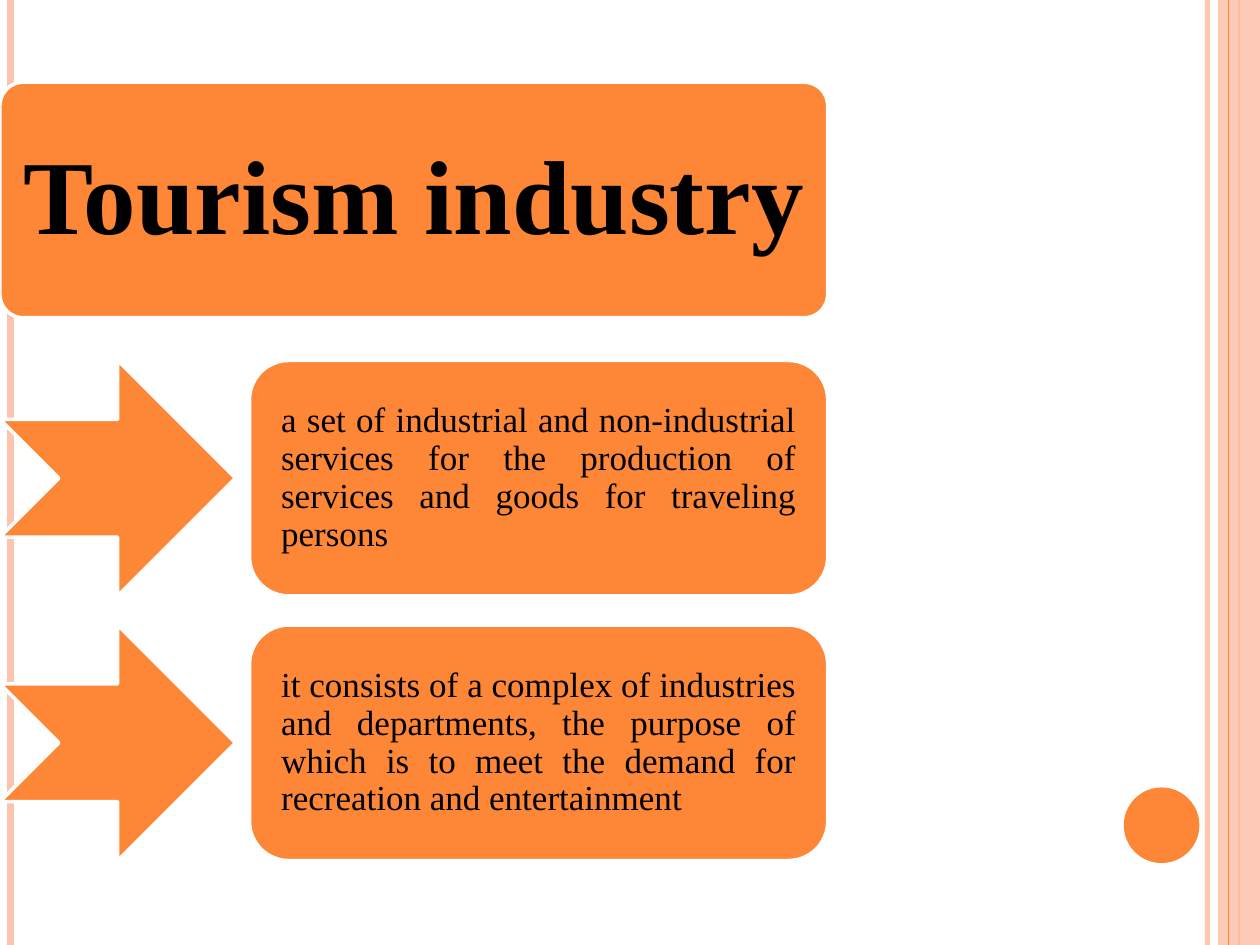
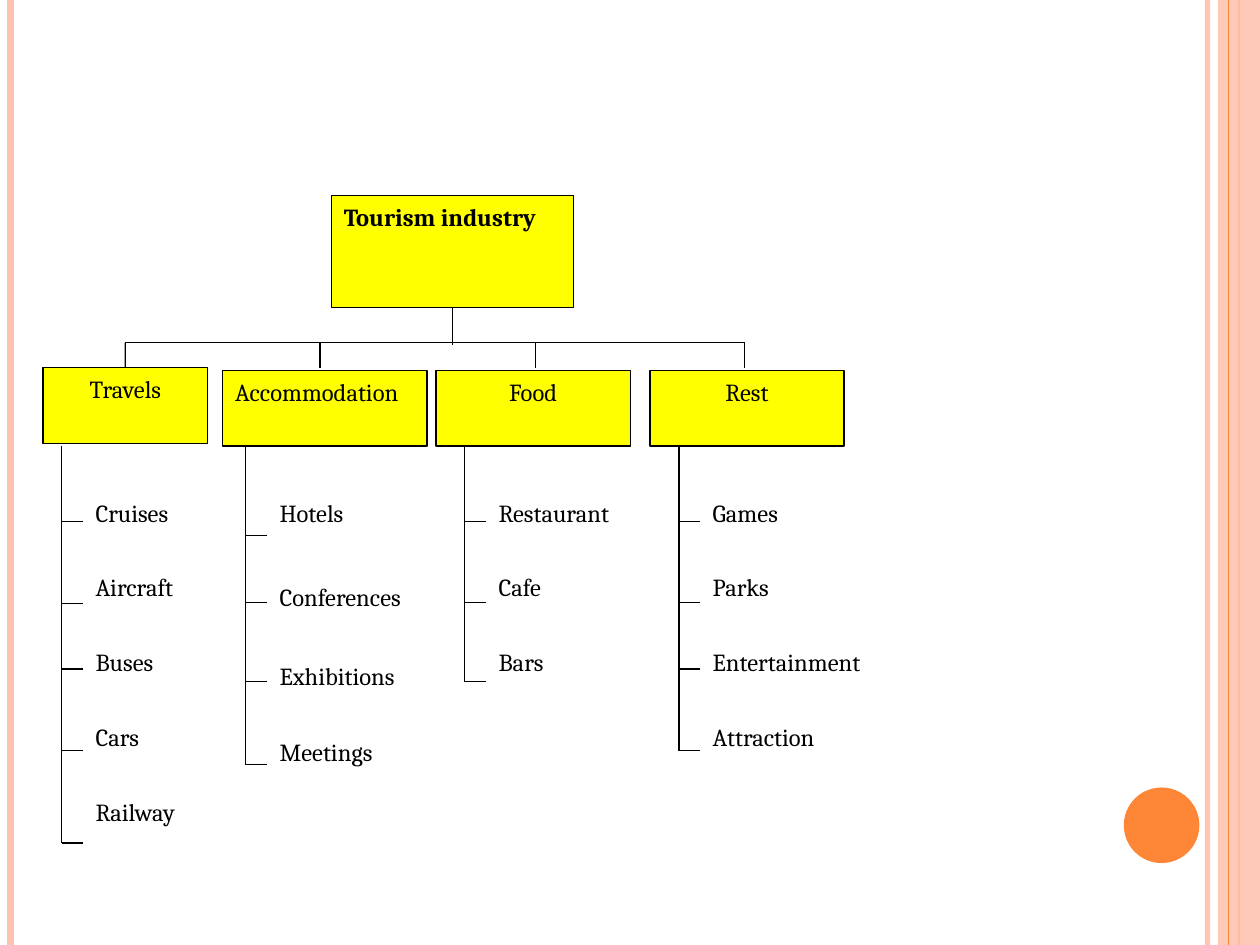
from lxml.etree import SubElement
from pptx import Presentation
from pptx.dml.color import RGBColor
from pptx.enum.shapes import MSO_CONNECTOR, MSO_SHAPE
from pptx.enum.text import MSO_ANCHOR, MSO_AUTO_SIZE, PP_ALIGN
from pptx.oxml.ns import qn
from pptx.util import Pt

ORANGE, PEACH, YELLOW = "FE8637", "FEC3AE", "FFFF00"
WHITE, BLACK = "FFFFFF", "000000"
SERIF, CHART_FONT = "Times New Roman", "Cambria"
SLIDE_WIDTH, SLIDE_HEIGHT = 720, 540
BOTTOM, TOP = 2, 0


# Shared helpers
def color(hex_text):
    return RGBColor.from_string(hex_text)


def set_alpha(shape, percent):
    for color_element in shape._element.spPr.iter(qn("a:srgbClr")):
        SubElement(color_element, qn("a:alpha")).set("val", str(percent * 1000))


def paint(shape, fill, line=None, width=0.75):
    shape.fill.solid()
    shape.fill.fore_color.rgb = color(fill)
    if line:
        shape.line.color.rgb = color(line)
        shape.line.width = Pt(width)
    else:
        shape.line.fill.background()


def place(shape, left, top, width, height):
    shape.left, shape.top = Pt(left), Pt(top)
    shape.width, shape.height = Pt(width), Pt(height)


def add_block(slide, kind, box, fill, line=None, width=0.75):
    shape = slide.shapes.add_shape(kind, *map(Pt, box))
    shape.shadow.inherit = False
    paint(shape, fill, line, width)
    return shape


def add_line(slide, start, end, line=BLACK, width=0.75):
    connector = slide.shapes.add_connector(
        MSO_CONNECTOR.STRAIGHT, *map(Pt, start + end))
    connector.line.color.rgb = color(line)
    connector.line.width = Pt(width)
    SubElement(connector._element.spPr, qn("a:effectLst"))
    return connector


def write(shape, text, font, size, align=PP_ALIGN.LEFT, anchor=MSO_ANCHOR.TOP,
          bold=False, inset=None, spacing=1.0, wrap=True):
    frame = shape.text_frame
    frame.text = text
    frame.word_wrap = wrap
    frame.auto_size = MSO_AUTO_SIZE.NONE
    frame.vertical_anchor = anchor
    if inset:
        frame.margin_left = frame.margin_right = Pt(inset)
        frame.margin_top = frame.margin_bottom = Pt(inset)
    paragraph = frame.paragraphs[0]
    paragraph.alignment = align
    paragraph.line_spacing = spacing
    for run in paragraph.runs:
        run.font.name, run.font.size, run.font.bold = font, Pt(size), bold
        run.font.color.rgb = color(BLACK)


# Stripes and disc, drawn once and kept on the layout
def decorate_layout(slide):
    def stripe(x, line, width):
        return add_line(slide, (x, 0), (x, SLIDE_HEIGHT), line, width)

    soft_stripe = stripe(690, PEACH, 3)
    set_alpha(soft_stripe, 93)
    left_stripe = stripe(6, PEACH, 4.5)
    dark_stripe = stripe(708, ORANGE, 1.5)
    band = add_block(slide, MSO_SHAPE.RECTANGLE,
                     (696, 0, 24, SLIDE_HEIGHT), PEACH)
    set_alpha(band, 87)
    thin_stripe = stripe(702, ORANGE, 0.75)
    disc = add_block(slide, MSO_SHAPE.OVAL, (642.2, 450, 43.2, 43.2), ORANGE)
    parts = (soft_stripe, left_stripe, dark_stripe, band, thin_stripe, disc)
    layout_tree = slide.slide_layout.shapes._spTree
    for number, part in enumerate(parts, 101):
        part._element.xpath(".//p:cNvPr")[0].set("id", str(number))
        layout_tree.append(part._element)


# Slide 1: banner and definitions
def add_banner(slide, box, text):
    left, top, width, height = box
    banner = add_block(slide, MSO_SHAPE.ROUNDED_RECTANGLE, box,
                       ORANGE, WHITE, 2)
    banner.adjustments[0] = 0.1
    title = slide.shapes.title
    place(title, left + 3.6, top + 3.9, width - 7.2, height - 7.8)
    write(title, text, SERIF, 60, PP_ALIGN.CENTER, MSO_ANCHOR.MIDDLE,
          bold=True, inset=8, spacing=0.9)
    banner._element.addnext(title._element)


def add_definition(slide, box, text):
    left, top, width, height = box
    card_offset = height + 8
    add_block(slide, MSO_SHAPE.NOTCHED_RIGHT_ARROW,
              (left, top, height, height), ORANGE, WHITE, 2)
    card = add_block(slide, MSO_SHAPE.ROUNDED_RECTANGLE,
                     (left + card_offset, top, width - card_offset, height),
                     ORANGE, WHITE, 2)
    write(card, text, SERIF, 20, PP_ALIGN.JUSTIFY, MSO_ANCHOR.MIDDLE,
          inset=11.5, spacing=0.9)


def build_definition_slide(slide):
    width, height, gap = 473, 134.6, 16.6
    add_banner(slide, (0, 47, width, height), "Tourism industry")
    definitions = (
        "a set of industrial and non-industrial services for the production "
        "of services and goods for traveling persons",
        "it consists of a complex of industries and departments, the purpose "
        "of which is to meet the demand for recreation and entertainment",
    )
    for row, text in enumerate(definitions):
        add_definition(slide, (0, 206 + row * (height + gap), width, height),
                       text)


# Slide 2: industry tree
LABEL_STEP = 42.8
BRANCHES = (
    # name, box left, top, width, alignment, drop x, spine x,
    # items with label top and tick height
    ("Travels", 24.5, 210.2, 94.3, PP_ALIGN.CENTER, 71.6, 35.3,
     (("Cruises", 0, 298), ("Aircraft", 1, 345), ("Buses", 2, 382.3),
      ("Cars", 3, 429), ("Railway", 4, 481.7))),
    ("Accommodation", 127.3, 211.7, 116.8, PP_ALIGN.LEFT, 182.8, 140.5,
     (("Hotels", 0, 306), ("Conferences", 1.13, 344.4),
      ("Exhibitions", 2.18, 389.5), ("Meetings", 3.19, 437))),
    ("Food", 249.2, 211.7, 111, PP_ALIGN.CENTER, 306, 265.6,
     (("Restaurant", 0, 298), ("Cafe", 1, 344.4), ("Bars", 2, 389.5))),
    ("Rest", 371.4, 211.7, 111, PP_ALIGN.CENTER, 425.5, 388,
     (("Games", 0, 298), ("Parks", 1, 344.4), ("Entertainment", 2, 382.3),
      ("Attraction", 3, 429))),
)


def add_items(slide, spine_x, top, items):
    tick = 12.2
    add_line(slide, (spine_x, top), (spine_x, items[-1][2]))
    for text, row, tick_y in items:
        label = slide.shapes.add_textbox(
            Pt(spine_x + tick), Pt(top + 25.8 + row * LABEL_STEP),
            Pt(95), Pt(LABEL_STEP))
        write(label, text, CHART_FONT, 14, wrap=False)
        add_line(slide, (spine_x + tick, tick_y), (spine_x, tick_y))


def add_branch(slide, bus_y, name, left, top, width, align, drop_x,
               spine_x, items):
    box = add_block(slide, MSO_SHAPE.RECTANGLE, (left, top, width, 43.2),
                    YELLOW, BLACK)
    write(box, name, CHART_FONT, 14, align)
    drop = add_line(slide, (drop_x, bus_y), (drop_x, 210.2))
    if abs(drop_x - left - width / 2) < 0.5:
        drop.end_connect(box, TOP)
    add_items(slide, spine_x, 255, items)


def build_tree_slide(slide):
    bus_y = 195.9
    root = slide.shapes.title
    place(root, 189.3, 111.6, 138.4, 64.1)
    paint(root, YELLOW, BLACK)
    write(root, "Tourism industry", CHART_FONT, 14, bold=True)
    stem = add_line(slide, (258.5, 175.7), (258.5, 197))
    stem.begin_connect(root, BOTTOM)
    drops = [branch[5] for branch in BRANCHES]
    add_line(slide, (drops[0], bus_y), (drops[-1], bus_y))
    for branch in BRANCHES:
        add_branch(slide, bus_y, *branch)


def main():
    presentation = Presentation()
    presentation.slide_width = Pt(SLIDE_WIDTH)
    presentation.slide_height = Pt(SLIDE_HEIGHT)
    title_only = presentation.slide_layouts[5]
    definition_slide = presentation.slides.add_slide(title_only)
    decorate_layout(definition_slide)
    build_definition_slide(definition_slide)
    build_tree_slide(presentation.slides.add_slide(title_only))
    presentation.save("out.pptx")


if __name__ == "__main__":
    main()
